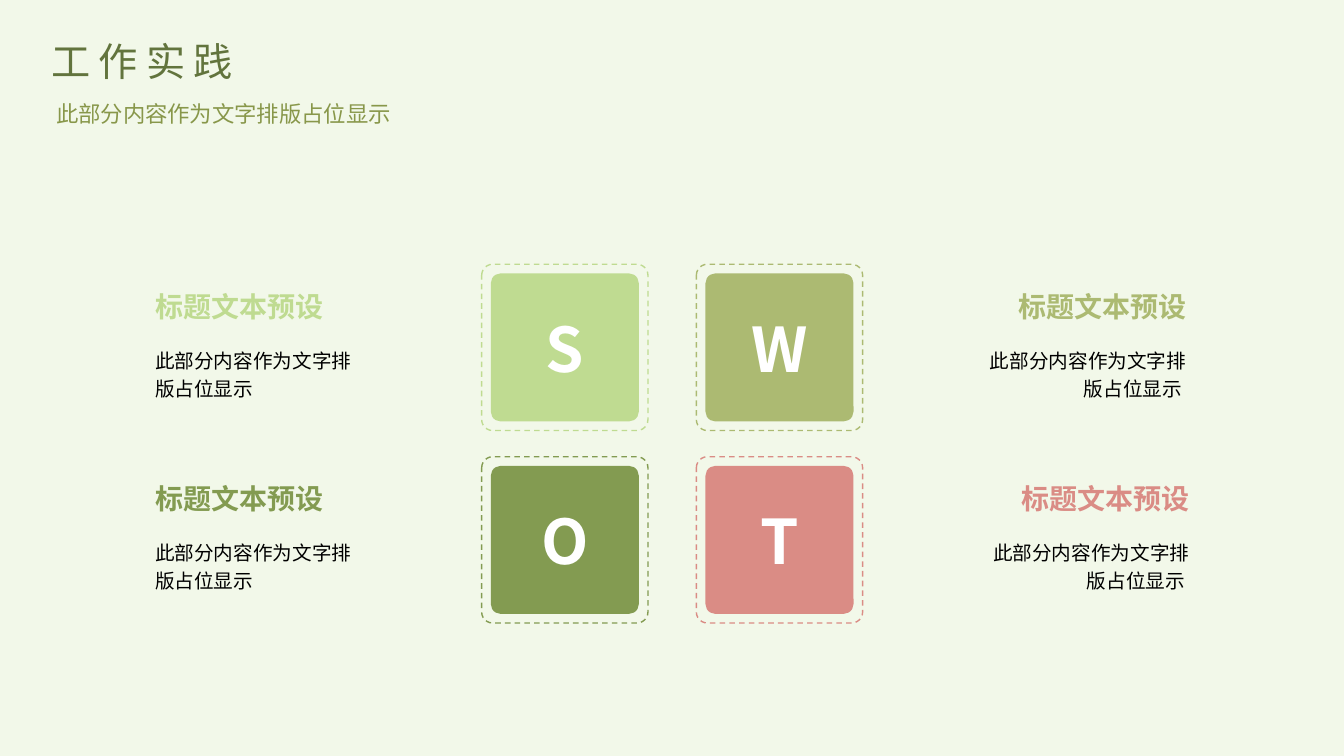
from dataclasses import dataclass

from lxml.etree import SubElement
from pptx import Presentation
from pptx.dml.color import RGBColor
from pptx.enum.dml import MSO_LINE
from pptx.enum.shapes import MSO_SHAPE
from pptx.enum.text import MSO_ANCHOR, MSO_AUTO_SIZE, PP_ALIGN
from pptx.oxml.ns import qn
from pptx.util import Cm, Pt

# Content
TITLE = "工作实践"
SUBTITLE = "此部分内容作为文字排版占位显示"
# letter, colour, heading, description; two per row
QUADRANTS = [
    ("S", "BFDB91", "标题文本预设", "此部分内容作为文字排版占位显示"),
    ("W", "ACBA72", "标题文本预设", "此部分内容作为文字排版占位显示 "),
    ("O", "839B51", "标题文本预设", "此部分内容作为文字排版占位显示"),
    ("T", "DA8C85", "标题文本预设", "此部分内容作为文字排版占位显示 "),
]


@dataclass(frozen=True)
class Theme:
    font: str = "Noto Sans CJK SC"
    background: str = "F2F8E9"
    title: str = "62743D"
    subtitle: str = "88974A"
    letter: str = "FFFFFF"
    body: str = "000000"
    title_size: int = 28
    subtitle_size: int = 16
    letter_size: int = 44
    heading_size: int = 20
    body_size: int = 14
    title_spacing: int = 6


THEME = Theme()

# Layout, in centimetres
GRID_LEFT, GRID_TOP = 12.14, 6.66
PITCH_X, PITCH_Y = 5.41, 4.85
FRAME, TILE = 4.19, 3.73
INSET = (FRAME - TILE) / 2
CORNER = 0.066
TEXT_LEFT = 3.91
TEXT_RIGHTS = (29.9, 29.98)
HEADING_WIDTH, HEADING_HEIGHT, HEADING_OFFSET = 7.28, 0.69, 0.63
BODY_WIDTH, BODY_HEIGHT, BODY_OFFSET = 5.04, 1.52, 1.96


def colour(value):
    return RGBColor.from_string(value)


def write(shape, text, size, text_colour, bold=False, align=PP_ALIGN.LEFT,
          anchor=MSO_ANCHOR.TOP, line_spacing=1.0, margin=None):
    """Fill a shape with one formatted paragraph and return its run."""
    frame = shape.text_frame
    frame.text = text
    frame.word_wrap = True
    frame.auto_size = MSO_AUTO_SIZE.NONE
    frame.vertical_anchor = anchor
    if margin is not None:
        frame.margin_left = frame.margin_right = Cm(margin)
        frame.margin_top = frame.margin_bottom = Cm(margin)
    paragraph = frame.paragraphs[0]
    paragraph.alignment = align
    paragraph.line_spacing = line_spacing
    run = paragraph.runs[0]
    run.font.size = Pt(size)
    run.font.bold = bold
    run.font.color.rgb = colour(text_colour)
    run.font.name = THEME.font
    SubElement(run.font._element, qn("a:ea")).set("typeface", THEME.font)
    return run


def add_text(slide, left, top, width, height, *content, **formatting):
    box = slide.shapes.add_textbox(Cm(left), Cm(top), Cm(width), Cm(height))
    write(box, *content, **formatting)


def add_square(slide, left, top, side):
    square = slide.shapes.add_shape(
        MSO_SHAPE.ROUNDED_RECTANGLE, Cm(left), Cm(top), Cm(side), Cm(side))
    square.adjustments[0] = CORNER
    square.shadow.inherit = False
    return square


def add_header(slide):
    title = slide.shapes.title
    title.left, title.top, title.width, title.height = Cm(1.04), Cm(0.81), Cm(6.99), Cm(1.45)
    run = write(title, TITLE, THEME.title_size, THEME.title)
    run.font._element.set("spc", str(THEME.title_spacing * 100))
    add_text(slide, 1.04, 2.26, 9.07, 1.02, SUBTITLE, THEME.subtitle_size,
             THEME.subtitle, align=PP_ALIGN.RIGHT, line_spacing=1.2)


def add_quadrant(slide, index, letter, accent, heading, description):
    row, column = divmod(index, 2)
    left = GRID_LEFT + column * PITCH_X
    top = GRID_TOP + row * PITCH_Y

    # Letter tile
    tile = add_square(slide, left + INSET, top + INSET, TILE)
    tile.fill.solid()
    tile.fill.fore_color.rgb = colour(accent)
    tile.line.fill.background()
    write(tile, letter, THEME.letter_size, THEME.letter, bold=True,
          align=PP_ALIGN.CENTER, anchor=MSO_ANCHOR.MIDDLE)

    # Dashed frame
    frame = add_square(slide, left, top, FRAME)
    frame.fill.background()
    frame.line.color.rgb = colour(accent)
    frame.line.width = Pt(1)
    frame.line.dash_style = MSO_LINE.DASH

    # Heading and description on the outer side
    def text_left(width):
        return TEXT_RIGHTS[row] - width if column else TEXT_LEFT

    align = PP_ALIGN.RIGHT if column else PP_ALIGN.LEFT
    add_text(slide, text_left(HEADING_WIDTH), top + HEADING_OFFSET,
             HEADING_WIDTH, HEADING_HEIGHT, heading, THEME.heading_size,
             accent, bold=True, align=align, margin=0)
    add_text(slide, text_left(BODY_WIDTH), top + BODY_OFFSET,
             BODY_WIDTH, BODY_HEIGHT, description, THEME.body_size,
             THEME.body, align=align, anchor=MSO_ANCHOR.MIDDLE,
             line_spacing=1.2, margin=0)


def main():
    presentation = Presentation()
    presentation.slide_width, presentation.slide_height = Cm(33.87), Cm(19.05)
    slide = presentation.slides.add_slide(presentation.slide_layouts.get_by_name("Title Only"))
    slide.background.fill.solid()
    slide.background.fill.fore_color.rgb = colour(THEME.background)

    add_header(slide)
    for index, quadrant in enumerate(QUADRANTS):
        add_quadrant(slide, index, *quadrant)
    presentation.save("out.pptx")


if __name__ == "__main__":
    main()
